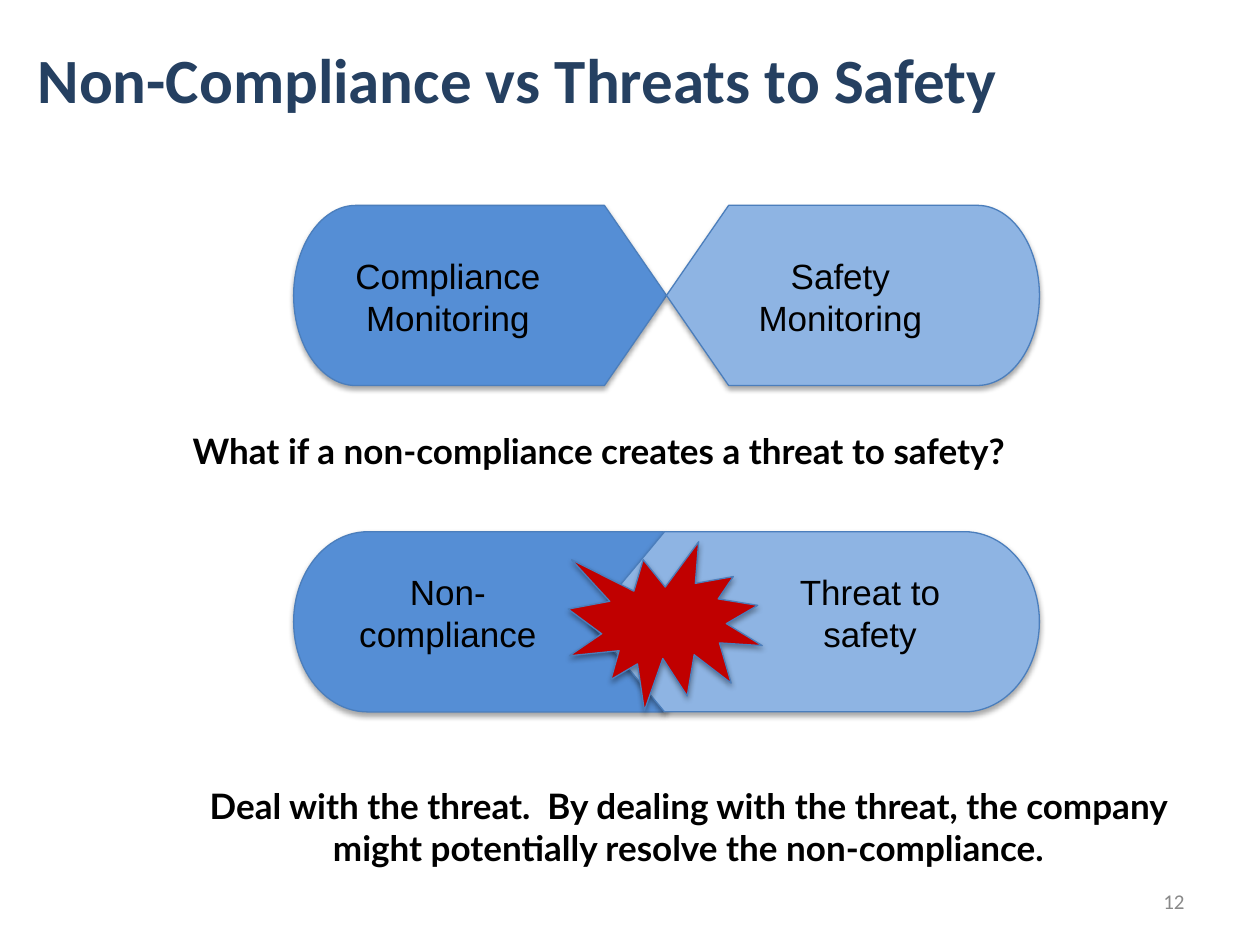
from lxml import etree
from pptx import Presentation
from pptx.dml.color import RGBColor
from pptx.enum import shapes, text
from pptx.oxml import ns
from pptx.util import Inches, Pt

KIND = shapes.MSO_SHAPE
ALIGN = text.PP_ALIGN
ANCHOR = text.MSO_ANCHOR
DARK, LIGHT, RED, EDGE = "558ED5", "8EB4E3", "C00000", "4B7EBC"


def color(code):
    return RGBColor.from_string(code)


def write(slide, box, words, size=20, font="Arial", ink="000000",
          bold=False, align=ALIGN.CENTER, anchor=ANCHOR.TOP):
    frame = slide.shapes.add_textbox(*map(Inches, box)).text_frame
    frame.word_wrap = True
    frame.vertical_anchor = anchor
    para = frame.paragraphs[0]
    para.alignment = align
    run = para.add_run()
    run.text = words
    run.font.size = Pt(size)
    run.font.name = font
    run.font.bold = bold
    run.font.color.rgb = color(ink)


def shadow(shape):
    """Soft shadow straight below the shape."""
    shape.shadow.inherit = False
    effects = shape._element.spPr.find(ns.qn("a:effectLst"))
    outer = etree.SubElement(effects, ns.qn("a:outerShdw"),
                             blurRad=str(Pt(3.1)), dist=str(Pt(1.8)),
                             dir="5400000", rotWithShape="0")
    tint = etree.SubElement(outer, ns.qn("a:srgbClr"), val="000000")
    etree.SubElement(tint, ns.qn("a:alpha"), val="35000")


def draw(slide, kind, box, fill, turn=0):
    shape = slide.shapes.add_shape(kind, *map(Inches, box))
    shape.rotation = turn
    shape.fill.solid()
    shape.fill.fore_color.rgb = color(fill)
    shape.line.color.rgb = color(EDGE)
    shape.line.width = Pt(0.75)
    shadow(shape)


def pair(slide, box, left, right):
    """Two displays pointing inward, each given its own width."""
    x, y, w, h = box
    draw(slide, KIND.FLOWCHART_DISPLAY, (x, y, left, h), DARK, turn=180)
    draw(slide, KIND.FLOWCHART_DISPLAY, (x + w - right, y, right, h), LIGHT)


def labels(slide, box, first, second, start, width):
    """Captions of a pair; start is the offset of the second one."""
    x, y, drop = box
    write(slide, (x + 0.27, y + drop, 1.91, 0.77), first)
    write(slide, (x + start, y + drop, width, 0.77), second)


def apart(slide, box):
    pair(slide, box, 2.96, 2.96)
    labels(slide, (box[0], box[1], 0.34), "Compliance Monitoring",
           "Safety Monitoring", 3.52, 1.64)


def clash(slide, box):
    x, y, _, _ = box
    pair(slide, box, 3.52, 3.57)
    draw(slide, KIND.EXPLOSION1, (x + 2.18, y + 0.08, 1.54, 1.34), RED)
    labels(slide, (x, y, 0.26), "Non-compliance",
           "Threat to safety", 3.75, 1.65)


def main():
    deck = Presentation()
    deck.slide_width, deck.slide_height = Inches(10), Inches(7.5)
    slide = deck.slides.add_slide(deck.slide_layouts[6])

    # Title and page number
    write(slide, (0.2, 0.27, 9, 0.7), "Non-Compliance vs Threats to Safety",
          size=36, font="Calibri", ink="254061", bold=True, align=ALIGN.LEFT)
    write(slide, (7.17, 6.95, 2.33, 0.4), "12", size=12, font="Calibri",
          ink="898989", align=ALIGN.RIGHT, anchor=ANCHOR.MIDDLE)

    # Diagrams
    apart(slide, (2.33, 1.63, 5.92, 1.43))
    clash(slide, (2.33, 4.22, 5.92, 1.43))

    # Question and answer
    write(slide, (1.43, 3.36, 7.76, 0.44),
          "What if a non-compliance creates a threat to safety?",
          font="Lato", bold=True, align=ALIGN.LEFT)
    write(slide, (1.43, 6.18, 8.07, 0.77),
          "Deal with the threat.  By dealing with the threat, the company "
          "might potentially resolve the non-compliance.",
          font="Lato", bold=True)

    deck.save("out.pptx")


if __name__ == "__main__":
    main()
